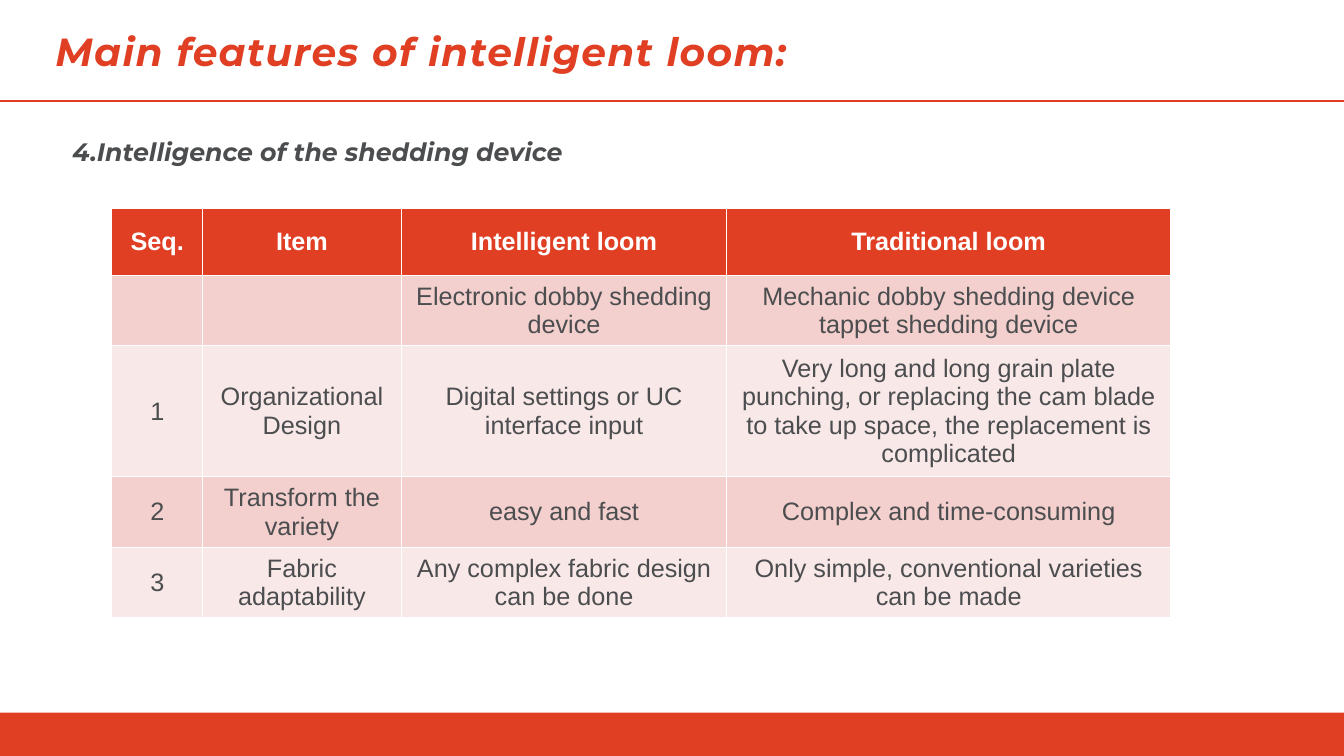
"""Build the slide comparing shedding on intelligent and traditional looms."""
from pptx import Presentation
from pptx.dml.color import RGBColor
from pptx.enum.shapes import MSO_CONNECTOR, MSO_SHAPE
from pptx.enum.text import MSO_ANCHOR, MSO_AUTO_SIZE, PP_ALIGN
from pptx.oxml.ns import qn
from pptx.util import Inches, Pt
from lxml import etree

STRAIGHT, RECTANGLE = MSO_CONNECTOR.STRAIGHT, MSO_SHAPE.RECTANGLE
TOP, MIDDLE = MSO_ANCHOR.TOP, MSO_ANCHOR.MIDDLE
LEFT, CENTER = PP_ALIGN.LEFT, PP_ALIGN.CENTER
NO_FIT, FIT_SHAPE = MSO_AUTO_SIZE.NONE, MSO_AUTO_SIZE.SHAPE_TO_FIT_TEXT

TITLE = "Main features of intelligent loom:"
SUBTITLE = "4.Intelligence of the shedding device"
ROWS = [
    ("Seq.", "Item", "Intelligent loom", "Traditional loom"),
    ("", "", "Electronic dobby shedding device",
     "Mechanic dobby shedding device\ntappet shedding device"),
    ("1", "Organizational Design", "Digital settings or UC interface input",
     "Very long and long grain plate punching, or replacing the cam blade "
     "to take up space, the replacement is complicated"),
    ("2", "Transform the variety", "easy and fast", "Complex and time-consuming"),
    ("3", "Fabric\nadaptability", "Any complex fabric design can be done",
     "Only simple, conventional varieties can be made"),
]
COLUMN_WIDTHS = (0.9, 1.97, 3.23, 4.4)
ROW_HEIGHTS = (0.66, 0.65, 0.95, 0.65, 0.65)
WIDTH, HEIGHT = 13.33, 7.5
FOOTER_HEIGHT = 0.43
RED, GRAY, WHITE = "E03F24", "4B4D4F", "FFFFFF"
BANDS = ("F9E8E8", "F3CFCD")


def color(value):
    return RGBColor.from_string(value)


def inches(*lengths):
    return [Inches(length) for length in lengths]


def format_text(frame, font, size, ink, bold, italic, align):
    for para in frame.paragraphs:
        para.alignment = align
        for span in para.runs:
            span.font.name = font
            span.font.size = Pt(size)
            span.font.color.rgb = color(ink)
            span.font.bold = bold
            span.font.italic = italic


def add_footer_and_rule(page):
    footer = page.shapes.add_shape(
        RECTANGLE, *inches(0, HEIGHT - FOOTER_HEIGHT, WIDTH, FOOTER_HEIGHT))
    footer.shadow.inherit = False
    footer.fill.solid()
    footer.fill.fore_color.rgb = color(RED)
    footer.line.fill.background()
    rule = page.shapes.add_connector(STRAIGHT, *inches(0, 1, WIDTH, 1))
    rule.line.color.rgb = color(RED)
    rule.line.width = Pt(1.5)
    etree.SubElement(rule.element.spPr, qn("a:effectLst"))


def add_headings(page):
    title = page.shapes.title
    title.left, title.top, title.width, title.height = inches(0.45, 0.27, 11.98, 0.87)
    frame = title.text_frame
    frame.text = TITLE
    frame.auto_size = NO_FIT
    frame.vertical_anchor = TOP
    format_text(frame, "Montserrat", 28, RED, True, True, LEFT)
    para = frame.paragraphs[0]
    para.line_spacing = 0.9
    para.runs[0].font._element.set("spc", "100")

    box = page.shapes.add_textbox(*inches(0.62, 1.3, 5.29, 0.4))
    box.text_frame.text = SUBTITLE
    box.text_frame.word_wrap = False
    box.text_frame.auto_size = FIT_SHAPE
    format_text(box.text_frame, "Montserrat", 18, GRAY, True, True, LEFT)


def add_comparison(page):
    table = page.shapes.add_table(
        len(ROWS), len(COLUMN_WIDTHS),
        *inches(1.11, 2.07, sum(COLUMN_WIDTHS), sum(ROW_HEIGHTS))).table
    for column, width in zip(table.columns, COLUMN_WIDTHS):
        column.width = Inches(width)
    for index, (row, height, texts) in enumerate(zip(table.rows, ROW_HEIGHTS, ROWS)):
        header = index == 0
        row.height = Inches(height)
        for cell, text in zip(row.cells, texts):
            cell.text_frame.text = text
            cell.vertical_anchor = MIDDLE
            cell.fill.solid()
            cell.fill.fore_color.rgb = color(RED if header else BANDS[index % 2])
            format_text(cell.text_frame, "Arial", 18, WHITE if header else GRAY,
                        header, False, CENTER)


def main():
    deck = Presentation()
    deck.slide_width, deck.slide_height = inches(WIDTH, HEIGHT)
    page = deck.slides.add_slide(deck.slide_layouts.get_by_name("Title Only"))
    add_footer_and_rule(page)
    add_headings(page)
    add_comparison(page)
    deck.save("out.pptx")


if __name__ == "__main__":
    main()
